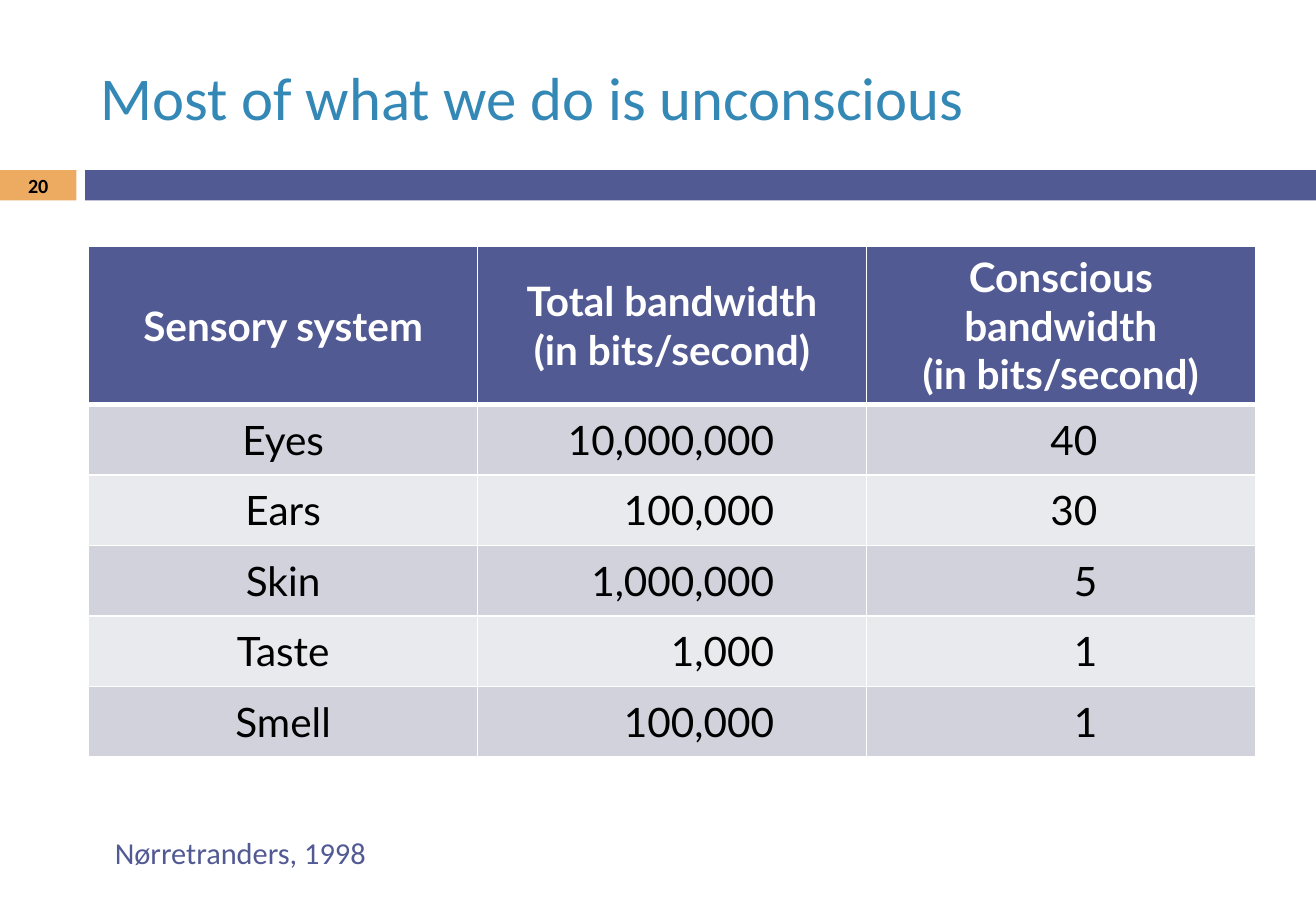
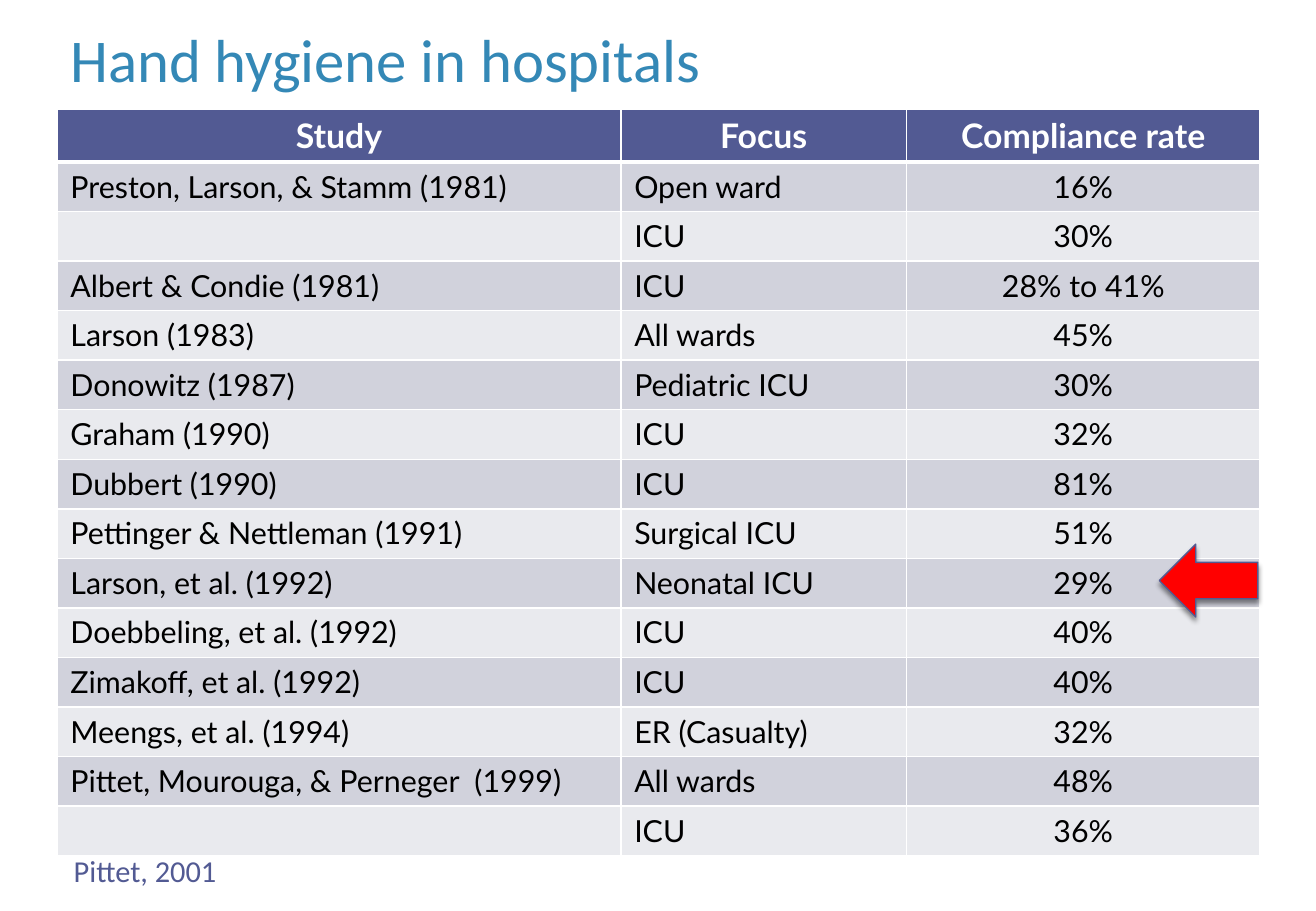
"""Build two slides on sensory bandwidth and hand hygiene."""
from lxml import etree
from pptx import Presentation
from pptx.dml.color import RGBColor
from pptx.enum.shapes import MSO_SHAPE
from pptx.enum.text import MSO_ANCHOR, PP_ALIGN
from pptx.oxml import parse_xml
from pptx.oxml.ns import nsdecls, qn
from pptx.util import Inches, Pt

LEFT, CENTER, RIGHT = PP_ALIGN.LEFT, PP_ALIGN.CENTER, PP_ALIGN.RIGHT
TOP, MIDDLE = MSO_ANCHOR.TOP, MSO_ANCHOR.MIDDLE
RECT, LEFT_ARROW = MSO_SHAPE.RECTANGLE, MSO_SHAPE.LEFT_ARROW

WHITE, BLACK, RED = "FFFFFF", "000000", "FF0000"
INDIGO, BLUE, ORANGE = "525A93", "3488B6", "EDAA61"
STRIPES = ("D1D2DC", "E9EAEE")
BODY_FONT, TABLE_FONT = "Calibri", "Lato"
CELL_PAD = 0.11

SENSES = [
    ("Sensory system", "Total bandwidth\n(in bits/second)",
     "Conscious bandwidth\n(in bits/second)"),
    ("Eyes", "10,000,000", "40"),
    ("Ears", "100,000", "30"),
    ("Skin", "1,000,000", "5"),
    ("Taste", "1,000", "1"),
    ("Smell", "100,000", "1"),
]
STUDIES = [
    ("Study", "Focus", "Compliance rate"),
    ("Preston, Larson, & Stamm (1981)", "Open ward", "16%"),
    ("", "ICU", "30%"),
    ("Albert & Condie (1981)", "ICU", "28% to 41%"),
    ("Larson (1983)", "All wards", "45%"),
    ("Donowitz (1987)", "Pediatric ICU", "30%"),
    ("Graham (1990)", "ICU", "32%"),
    ("Dubbert (1990)", "ICU", "81%"),
    ("Pettinger & Nettleman (1991)", "Surgical ICU", "51%"),
    ("Larson, et al. (1992)", "Neonatal ICU", "29%"),
    ("Doebbeling, et al. (1992)", "ICU", "40%"),
    ("Zimakoff, et al. (1992)", "ICU", "40%"),
    ("Meengs, et al. (1994)", "ER (Casualty)", "32%"),
    ("Pittet, Mourouga, & Perneger  (1999)", "All wards", "48%"),
    ("", "ICU", "36%"),
]


def rgb(color):
    """Turn a hex string into a colour."""
    return RGBColor.from_string(color)


def write(tf, text, size=18, color=BLACK, font=BODY_FONT, bold=False, align=LEFT):
    """Write text into a frame, one paragraph a line."""
    for i, line in enumerate(text.split("\n")):
        p = tf.add_paragraph() if i else tf.paragraphs[0]
        p.alignment = align
        p.font.size = Pt(size)
        if line:
            r = p.add_run()
            r.text = line
            r.font.size = Pt(size)
            r.font.name = font
            r.font.bold = bold
            r.font.color.rgb = rgb(color)


def add_text(s, box, text, anchor=TOP, **fmt):
    """Add a wrapping text box."""
    tf = s.shapes.add_textbox(*map(Inches, box)).text_frame
    tf.word_wrap = True
    tf.vertical_anchor = anchor
    write(tf, text, **fmt)


def add_title(s, box, text):
    """Add a slide title."""
    add_text(s, box, text, anchor=MIDDLE, size=36, color=BLUE)


def add_citation(s, box, text):
    """Add a source line."""
    add_text(s, box, text, color=INDIGO, align=RIGHT)


def add_shape(s, kind, box, fill, line=None):
    """Add a filled shape without shadow."""
    sp = s.shapes.add_shape(kind, *map(Inches, box))
    sp.shadow.inherit = False
    sp.fill.solid()
    sp.fill.fore_color.rgb = rgb(fill)
    if line:
        sp.line.color.rgb = rgb(line)
        sp.line.width = Pt(0.79)
    else:
        sp.line.fill.background()
    return sp


def add_shadow(sp, blur, dist, alpha):
    """Give a shape a black shadow that falls straight down."""
    effects = sp._element.spPr.find(qn("a:effectLst"))
    effects.append(parse_xml(
        f'<a:outerShdw {nsdecls("a")} blurRad="{Pt(blur)}" dist="{Pt(dist)}" '
        f'dir="5400000" rotWithShape="0"><a:srgbClr val="{BLACK}">'
        f'<a:alpha val="{alpha * 1000}"/></a:srgbClr></a:outerShdw>'))


def set_borders(cell, row):
    """Draw white cell borders, thick below the header."""
    tc_pr = cell._tc.get_or_add_tcPr()
    widths = {"L": 1, "R": 1, "T": 3 if row == 1 else 1, "B": 3 if row == 0 else 1}
    for side, width in widths.items():
        ln = etree.SubElement(tc_pr, qn(f"a:ln{side}"), w=str(Pt(width)))
        fill = etree.SubElement(ln, qn("a:solidFill"))
        etree.SubElement(fill, qn("a:srgbClr"), val=WHITE)


def add_table(s, at, rows, widths, heights, aligns, header_size, body_size,
              anchor=MIDDLE, right_pads=(CELL_PAD,) * 3):
    """Add a striped table with a header row."""
    table = s.shapes.add_table(len(rows), len(widths), *map(
        Inches, (*at, sum(widths), sum(heights)))).table
    for column, width in zip(table.columns, widths):
        column.width = Inches(width)
    for i, (values, height) in enumerate(zip(rows, heights)):
        table.rows[i].height = Inches(height)
        header = i == 0
        for j, text in enumerate(values):
            cell = table.cell(i, j)
            set_borders(cell, i)
            cell.fill.solid()
            cell.fill.fore_color.rgb = rgb(INDIGO if header else STRIPES[(i - 1) % 2])
            cell.vertical_anchor = MIDDLE if header else anchor
            cell.margin_left = Inches(CELL_PAD)
            cell.margin_right = Inches(CELL_PAD if header else right_pads[j])
            write(cell.text_frame, text, font=TABLE_FONT, bold=header,
                  size=header_size if header else body_size,
                  color=WHITE if header else BLACK,
                  align=CENTER if header else aligns[j])


def add_band(s, number):
    """Add the band with the slide number."""
    add_shape(s, RECT, (0, 1.4, 0.63, 0.25), ORANGE)
    add_shape(s, RECT, (0.7, 1.4, 10.13, 0.25), INDIGO)
    add_text(s, (0, 1.39, 0.63, 0.27), number, anchor=MIDDLE, size=11.9,
             bold=True, align=CENTER)


def build_senses(s):
    """Build the slide on sensory bandwidth."""
    add_band(s, "20")
    add_title(s, (0.73, 0.25, 9.66, 1.08), "Most of what we do is unconscious")
    add_citation(s, (0.26, 6.82, 2.85, 0.4), "Nørretranders, 1998")
    add_table(s, (0.73, 2.03), SENSES, [3.2] * 3, [0.82] + [0.58] * 5,
              (CENTER, RIGHT, RIGHT), 24, 24, right_pads=(CELL_PAD, 0.76, 1.3))


def build_hygiene(s):
    """Build the slide on hand hygiene."""
    add_title(s, (0.48, 0.13, 9.9, 0.7), "Hand hygiene in hospitals")
    add_table(s, (0.47, 0.9), STUDIES, [4.64, 2.35, 2.91],
              [6.12 / len(STUDIES)] * len(STUDIES), (LEFT, LEFT, CENTER), 20, 18,
              anchor=TOP)
    add_citation(s, (0.22, 6.97, 1.66, 0.4), "Pittet, 2001")
    arrow = add_shape(s, LEFT_ARROW, (9.54, 4.48, 0.81, 0.6), RED, INDIGO)
    add_shadow(arrow, blur=3, dist=2.4, alpha=45)


def main():
    """Build and save the presentation."""
    prs = Presentation()
    prs.slide_width, prs.slide_height = Inches(10.83), Inches(7.5)
    for build in (build_senses, build_hygiene):
        build(prs.slides.add_slide(prs.slide_layouts[6]))
    prs.save("out.pptx")


if __name__ == "__main__":
    main()
